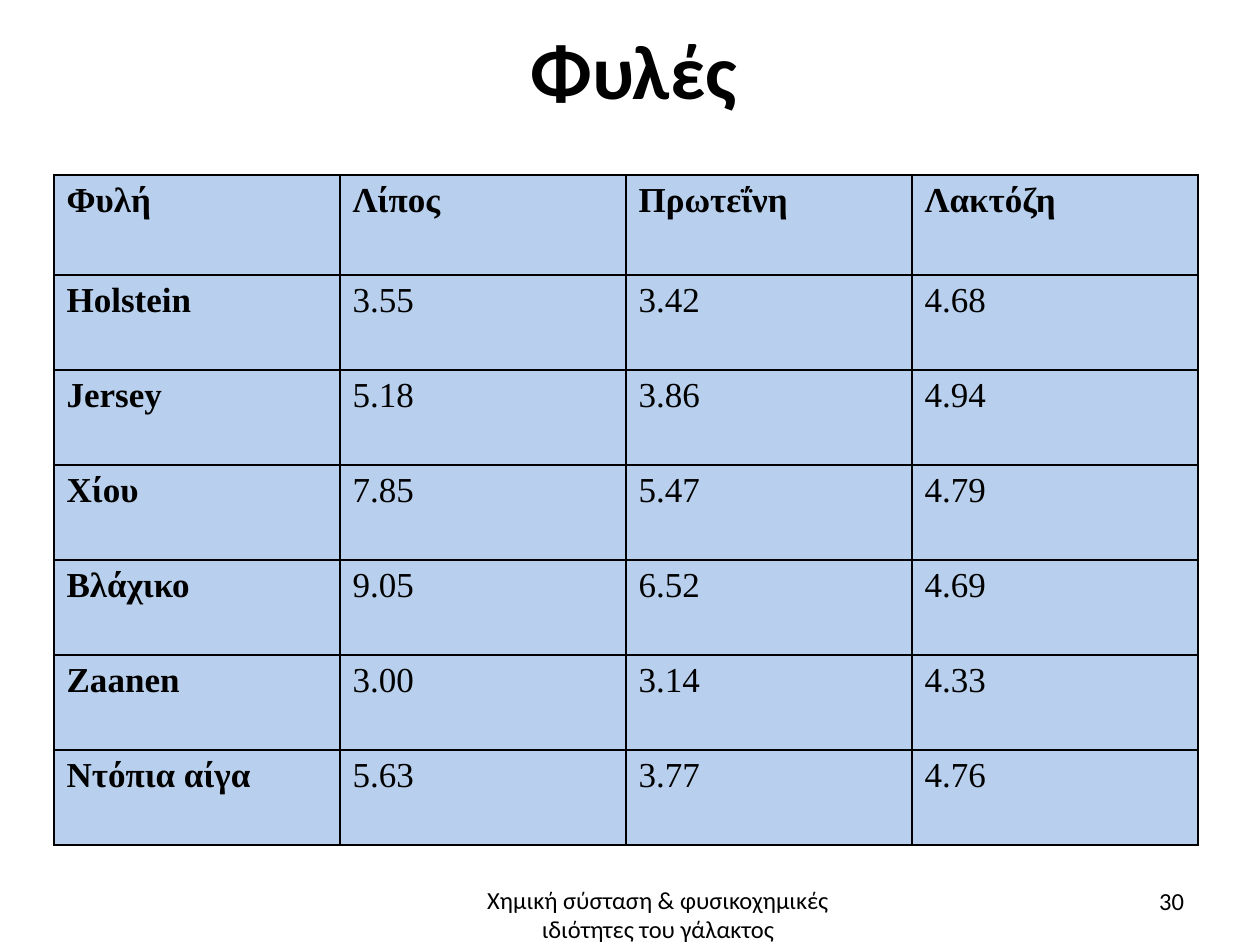
from dataclasses import dataclass

from lxml import etree
from pptx import Presentation
from pptx.dml.color import RGBColor
from pptx.enum.text import MSO_ANCHOR, PP_ALIGN
from pptx.oxml.ns import qn
from pptx.util import Pt

EMU_PER_PX = 914400 / 126
CENTER, RIGHT = PP_ALIGN.CENTER, PP_ALIGN.RIGHT
TOP, MIDDLE = MSO_ANCHOR.TOP, MSO_ANCHOR.MIDDLE
BLANK_LAYOUT = 6


@dataclass(frozen=True)
class Theme:
    text: str = "000000"
    cell: str = "B8D0ED"
    border: str = "000000"
    border_width: int = 1
    sans: str = "Calibri"
    serif: str = "Times New Roman"
    title_size: int = 44
    table_size: int = 20
    footer_size: int = 14


@dataclass(frozen=True)
class Label:
    text: str
    left: int
    top: int
    width: int
    height: int
    size: int
    align: PP_ALIGN
    anchor: MSO_ANCHOR
    bold: bool = False
    line_spacing: float = 1.0
    insets: tuple[int, int, int, int] = (13, 6, 13, 6)


THEME = Theme()

LABELS = [
    Label("Φυλές", 54, 6, 1160, 139, THEME.title_size, CENTER, MIDDLE,
          bold=True, line_spacing=0.8, insets=(0, 3, 0, 0)),
    Label("Χημική σύσταση & φυσικοχημικές ιδιότητες του γάλακτος",
          438, 879, 440, 66, THEME.footer_size, CENTER, TOP),
    Label("30", 903, 876, 294, 50, THEME.footer_size, RIGHT, MIDDLE),
]

BREEDS = [
    ("Φυλή", "Λίπος", "Πρωτεΐνη", "Λακτόζη"),
    ("Holstein", "3.55", "3.42", "4.68"),
    ("Jersey", "5.18", "3.86", "4.94"),
    ("Χίου", "7.85", "5.47", "4.79"),
    ("Βλάχικο", "9.05", "6.52", "4.69"),
    ("Zaanen", "3.00", "3.14", "4.33"),
    ("Ντόπια αίγα", "5.63", "3.77", "4.76"),
]
TABLE_LEFT, TABLE_TOP = 54, 175
COLUMN_WIDTH, HEADER_HEIGHT, ROW_HEIGHT = 286, 100, 95
HANGING_INDENT = 48


def px(length: int) -> int:
    return round(length * EMU_PER_PX)


def style_run(run, font: str, size: int, bold: bool) -> None:
    run.font.name = font
    run.font.size = Pt(size)
    run.font.bold = bold
    run.font.color.rgb = RGBColor.from_string(THEME.text)


def add_label(slide, label: Label) -> None:
    shape = slide.shapes.add_textbox(
        px(label.left), px(label.top), px(label.width), px(label.height))
    frame = shape.text_frame
    frame.word_wrap = True
    frame.vertical_anchor = label.anchor
    (frame.margin_left, frame.margin_top,
     frame.margin_right, frame.margin_bottom) = map(px, label.insets)
    frame.text = label.text
    paragraph = frame.paragraphs[0]
    paragraph.alignment = label.align
    paragraph.line_spacing = label.line_spacing
    style_run(paragraph.runs[0], THEME.sans, label.size, label.bold)


def add_borders(cell) -> None:
    properties = cell._tc.get_or_add_tcPr()
    for position, side in enumerate(("a:lnL", "a:lnR", "a:lnT", "a:lnB")):
        line = etree.Element(qn(side), w=str(Pt(THEME.border_width)))
        fill = etree.SubElement(line, qn("a:solidFill"))
        etree.SubElement(fill, qn("a:srgbClr"), val=THEME.border)
        properties.insert(position, line)


def fill_cell(cell, text: str, bold: bool) -> None:
    cell.fill.solid()
    cell.fill.fore_color.rgb = RGBColor.from_string(THEME.cell)
    add_borders(cell)
    cell.text_frame.text = text
    paragraph = cell.text_frame.paragraphs[0]
    properties = paragraph._p.get_or_add_pPr()
    properties.set("marL", str(px(HANGING_INDENT)))
    properties.set("indent", str(-px(HANGING_INDENT)))
    style_run(paragraph.runs[0], THEME.serif, THEME.table_size, bold)


def add_breed_table(slide) -> None:
    row_count, column_count = len(BREEDS), len(BREEDS[0])
    heights = [HEADER_HEIGHT] + [ROW_HEIGHT] * (row_count - 1)
    table = slide.shapes.add_table(
        row_count, column_count, px(TABLE_LEFT), px(TABLE_TOP),
        px(COLUMN_WIDTH * column_count), px(sum(heights))).table
    table.horz_banding = False
    for column in table.columns:
        column.width = px(COLUMN_WIDTH)
    for row_index, values in enumerate(BREEDS):
        table.rows[row_index].height = px(heights[row_index])
        for column_index, value in enumerate(values):
            fill_cell(table.cell(row_index, column_index), value,
                      bold=row_index == 0 or column_index == 0)


def main() -> None:
    presentation = Presentation()
    presentation.slide_width = px(1260)
    presentation.slide_height = px(945)
    slide = presentation.slides.add_slide(
        presentation.slide_layouts[BLANK_LAYOUT])
    title, *footers = LABELS
    add_label(slide, title)
    add_breed_table(slide)
    for footer in footers:
        add_label(slide, footer)
    presentation.save("out.pptx")


if __name__ == "__main__":
    main()
